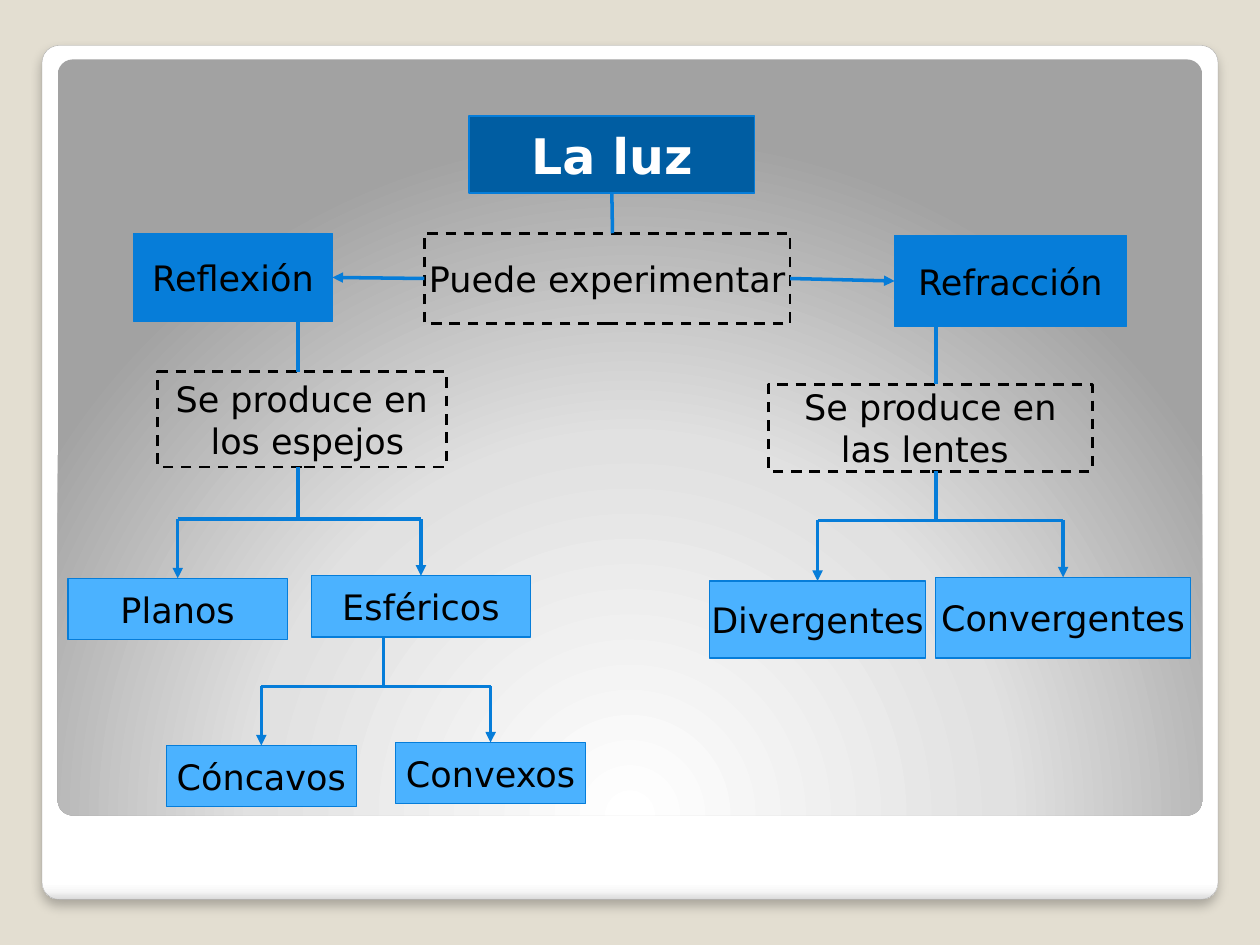
from dataclasses import dataclass
from typing import Optional

from lxml.etree import SubElement
from pptx import Presentation
from pptx.dml.color import RGBColor
from pptx.enum.dml import MSO_LINE
from pptx.enum.shapes import MSO_CONNECTOR as Connector, MSO_SHAPE as Preset
from pptx.enum.text import MSO_ANCHOR as Anchor, PP_ALIGN as Align
from pptx.oxml import parse_xml
from pptx.oxml.ns import nsdecls, qn
from pptx.util import Pt

TOP, LEFT, BOTTOM, RIGHT = range(4)


@dataclass(frozen=True)
class Theme:
    font: str = "DejaVu Sans"
    title_size: float = 28
    body_size: float = 20
    link_width: float = 2
    edge_width: float = 0.75
    dash_width: float = 1.5
    backdrop: str = "E3DED1"
    card_edge: str = "A4A4A4"
    title_fill: str = "005DA2"
    accent: str = "067DD9"
    leaf_fill: str = "4BB2FF"
    dark: str = "000000"
    light: str = "FFFFFF"
    card_stops: tuple = ((0, "FFFFFF"), (98, "FFFFFF"), (99, "F7F7F7"), (100, "DADADA"))
    panel_stops: tuple = ((0, "FFFFFF"), (55, "E1E1E1"), (100, "A2A2A2"))


THEME = Theme()
DOWNWARD = '<a:lin ang="5400000" scaled="0"/>'
FROM_BELOW = ('<a:path path="circle"><a:fillToRect l="50000" t="175000" '
              'r="50000" b="-75000"/></a:path>')


@dataclass(frozen=True)
class Style:
    fill: Optional[str]
    edge: str = THEME.accent
    edge_width: float = THEME.edge_width
    dashed: bool = False
    ink: str = THEME.dark
    size: float = THEME.body_size
    bold: bool = False


TITLE = Style(THEME.title_fill, ink=THEME.light, size=THEME.title_size, bold=True)
PHENOMENON = Style(THEME.accent)
RELATION = Style(None, THEME.dark, THEME.dash_width, dashed=True)
KIND = Style(THEME.leaf_fill)


@dataclass(frozen=True)
class Concept:
    key: str
    lines: tuple
    left: float
    top: float
    width: float
    height: float
    style: Style


@dataclass(frozen=True)
class Branch:
    """A stem under a parent that splits into arrows to its children."""
    parent: str
    stem_x: float
    bar_y: float
    children: tuple


CONCEPTS = (
    Concept("light", ("La luz",), 268, 66.3, 163.3, 44, TITLE),
    Concept("may", ("Puede experimentar",), 242.5, 133.3, 209, 51.7, RELATION),
    Concept("reflection", ("Reflexión",), 76.3, 133.3, 113.7, 50.5, PHENOMENON),
    Concept("refraction", ("Refracción",), 511.2, 134.6, 132.4, 52, PHENOMENON),
    Concept("mirrors", ("Se produce en", " los espejos"), 90, 212.4, 165, 54.4, RELATION),
    Concept("lenses", ("Se produce en", "las lentes "), 439.2, 219.6, 185, 49.8, RELATION),
    Concept("flat", ("Planos",), 38.9, 330.5, 125.3, 35, KIND),
    Concept("spherical", ("Esféricos",), 177.9, 329, 125.3, 35, KIND),
    Concept("concave", ("Cóncavos",), 95, 426, 108.7, 35, KIND),
    Concept("convex", ("Convexos",), 226, 424.3, 108.7, 35, KIND),
    Concept("diverging", ("Divergentes",), 405.4, 332, 123.6, 44, KIND),
    Concept("converging", ("Convergentes",), 534.7, 330, 145.6, 46, KIND),
)

BRANCHES = (
    Branch("mirrors", 170.4, 296.6, ("flat", "spherical")),
    Branch("spherical", 219.2, 392.2, ("concave", "convex")),
    Branch("lenses", 534.8, 297.4, ("diverging", "converging")),
)


def rgb(code: str) -> RGBColor:
    return RGBColor.from_string(code)


def draw_card(slide, left, top, width, height, stops, direction):
    """Add a rounded rectangle filled with a gradient."""
    card = slide.shapes.add_shape(Preset.ROUNDED_RECTANGLE, Pt(left), Pt(top),
                                  Pt(width), Pt(height))
    card.adjustments[0] = 0.02
    card.shadow.inherit = False
    card.line.fill.background()
    card.fill.solid()
    stop_xml = "".join(f'<a:gs pos="{pos * 1000}"><a:srgbClr val="{code}"/></a:gs>'
                       for pos, code in stops)
    gradient = parse_xml(f'<a:gradFill {nsdecls("a")} rotWithShape="1">'
                         f'<a:gsLst>{stop_xml}</a:gsLst>{direction}</a:gradFill>')
    properties = card.element.spPr
    properties.replace(properties.find(qn("a:solidFill")), gradient)
    return card


def add_soft_shadow(card):
    effects = card.element.spPr.find(qn("a:effectLst"))
    shadow = SubElement(effects, qn("a:outerShdw"), blurRad=str(Pt(6)), dist=str(Pt(4)),
                        dir="5400000", algn="tl", rotWithShape="0")
    colour = SubElement(shadow, qn("a:srgbClr"), val=THEME.dark)
    SubElement(colour, qn("a:alpha"), val="25000")


def draw_concept(slide, concept: Concept):
    style = concept.style
    box = slide.shapes.add_shape(Preset.RECTANGLE, Pt(concept.left), Pt(concept.top),
                                 Pt(concept.width), Pt(concept.height))
    box.shadow.inherit = False
    if style.fill:
        box.fill.solid()
        box.fill.fore_color.rgb = rgb(style.fill)
    else:
        box.fill.background()
    box.line.color.rgb = rgb(style.edge)
    box.line.width = Pt(style.edge_width)
    if style.dashed:
        box.line.dash_style = MSO_LINE.DASH
    frame = box.text_frame
    frame.word_wrap = False
    frame.vertical_anchor = Anchor.MIDDLE
    for index, line in enumerate(concept.lines):
        paragraph = frame.add_paragraph() if index else frame.paragraphs[0]
        paragraph.alignment = Align.CENTER
        run = paragraph.add_run()
        run.text = line
        run.font.name = THEME.font
        run.font.size = Pt(style.size)
        run.font.bold = style.bold
        run.font.color.rgb = rgb(style.ink)
    return box


def draw_link(slide, start=(0, 0), end=(0, 0), source=None, target=None, arrow=False):
    """Draw a line between points; source and target are (box, side) joints."""
    link = slide.shapes.add_connector(Connector.STRAIGHT, *map(Pt, start + end))
    if source:
        link.begin_connect(*source)
    if target:
        link.end_connect(*target)
    link.line.color.rgb = rgb(THEME.accent)
    link.line.width = Pt(THEME.link_width)
    properties = link.element.spPr
    if arrow:
        SubElement(properties.find(qn("a:ln")), qn("a:tailEnd"), type="triangle")
    SubElement(properties, qn("a:effectLst"))


def draw_branch(slide, branch: Branch, concepts: dict, boxes: dict):
    parent = concepts[branch.parent]
    draw_link(slide, (branch.stem_x, parent.top + parent.height),
              (branch.stem_x, branch.bar_y))
    forks = [(concepts[key].left + concepts[key].width / 2, branch.bar_y)
             for key in branch.children]
    draw_link(slide, forks[0], forks[-1])
    for key, fork in zip(branch.children, forks):
        draw_link(slide, fork, target=(boxes[key], TOP), arrow=True)


def main():
    deck = Presentation()
    deck.slide_width, deck.slide_height = Pt(720), Pt(540)
    slide = deck.slides.add_slide(deck.slide_layouts[6])
    slide.background.fill.solid()
    slide.background.fill.fore_color.rgb = rgb(THEME.backdrop)

    card = draw_card(slide, 24, 26, 672, 488, THEME.card_stops, DOWNWARD)
    card.line.color.rgb = rgb(THEME.card_edge)
    card.line.width = Pt(0.16)
    add_soft_shadow(card)
    draw_card(slide, 33, 34, 654, 432, THEME.panel_stops, FROM_BELOW)

    concepts = {concept.key: concept for concept in CONCEPTS}
    boxes = {key: draw_concept(slide, concept) for key, concept in concepts.items()}

    draw_link(slide, end=(350, concepts["may"].top), source=(boxes["light"], BOTTOM))
    for side, key, facing in ((LEFT, "reflection", RIGHT), (RIGHT, "refraction", LEFT)):
        draw_link(slide, source=(boxes["may"], side), target=(boxes[key], facing), arrow=True)
    for upper, lower, x in (("reflection", "mirrors", 170.4), ("refraction", "lenses", 534.8)):
        draw_link(slide, (x, concepts[upper].top + concepts[upper].height),
                  (x, concepts[lower].top))
    for branch in BRANCHES:
        draw_branch(slide, branch, concepts, boxes)

    deck.save("out.pptx")


if __name__ == "__main__":
    main()
